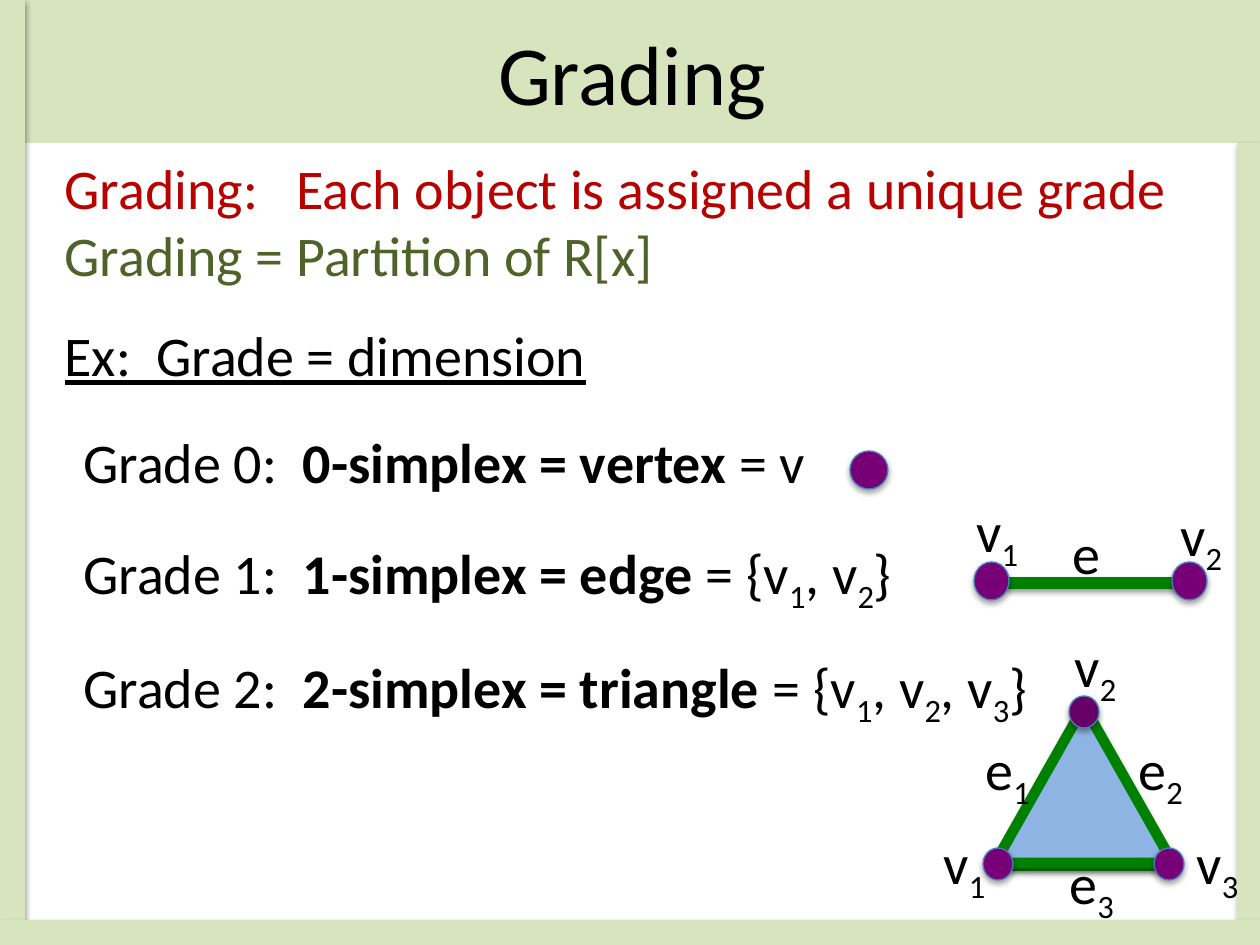
from lxml import etree
from pptx import Presentation, util as u
from pptx.dml.color import RGBColor
from pptx.enum import shapes, text
from pptx.oxml import ns

HUE = {"band": "D7E4BD", "red": "B60200", "olive": "4F6228", "ink": "000000",
       "dot": "770077", "peak": "660066", "rim": "4B7EBC",
       "edge": "008000", "face": "8EB4E3"}
HUE = {name: RGBColor.from_string(code) for name, code in HUE.items()}
PX = 914400 / 126


def shade(shape, alpha=35, dist=23000):
    glow = etree.SubElement(shape._element.spPr, ns.qn("a:effectLst"))
    drop = etree.SubElement(glow, ns.qn("a:outerShdw"), blurRad="40000",
                            dist=str(dist), dir="5400000", rotWithShape="0")
    tint = etree.SubElement(drop, ns.qn("a:srgbClr"), val="000000")
    etree.SubElement(tint, ns.qn("a:alpha"), val=str(alpha * 1000))


def write(para, parts):
    para.font.size, para.font.name = u.Pt(32), "Calibri"
    para.font.color.rgb = HUE["ink"]
    for words, bold in parts:
        for i, piece in enumerate(words.split("_")):
            if i:
                low = para.add_run()
                low.text = piece[0]
                low._r.get_or_add_rPr().set("baseline", "-25000")
                piece = piece[1:]
            if piece:
                run = para.add_run()
                run.text = piece
                if bold:
                    run.font.bold = True


deck = Presentation()
deck.slide_width, deck.slide_height = u.Inches(10), u.Inches(7.5)
slide = deck.slides.add_slide(deck.slide_layouts[1])
art = slide.shapes
kind = shapes.MSO_SHAPE

title = art.title
title.left, title.top, title.width, title.height = [
    int(n * PX) for n in (2, 0, 1260, 143)]
title.fill.solid()
title.fill.fore_color.rgb = HUE["band"]
title.text_frame.text = "Grading"
title.text_frame.vertical_anchor = text.MSO_ANCHOR.MIDDLE
head = title.text_frame.paragraphs[0]
head.alignment = text.PP_ALIGN.CENTER
head.font.size, head.font.name = u.Pt(48), "Calibri"
head.font.color.rgb = HUE["ink"]

for box in [(0, 0, 25, 945), (1237, 143, 25, 802), (0, 920, 1260, 25)]:
    strip = art.add_shape(kind.RECTANGLE, *[int(n * PX) for n in box])
    strip.fill.solid()
    strip.fill.fore_color.rgb = HUE["band"]
    strip.line.fill.background()
    shade(strip)

body = slide.placeholders[1]
body.left, body.top, body.width, body.height = [
    int(n * PX) for n in (52, 147, 1160, 251)]
frame = body.text_frame
frame.auto_size = text.MSO_AUTO_SIZE.NONE
lines = [("Grading:   Each object is assigned a unique grade", "red", 0),
         ("Grading = Partition of R[x]", "olive", 0),
         ("Ex:  Grade = dimension", "ink", 19)]
for i, (words, hue, gap) in enumerate(lines):
    para = frame.add_paragraph() if i else frame.paragraphs[0]
    write(para, [(words, False)])
    para.font.color.rgb = HUE[hue]
    para.font.underline = hue == "ink"
    para.space_before = u.Pt(gap)
    props = para._p.get_or_add_pPr()
    props.set("marL", "0")
    props.set("indent", "0")
    props.find(ns.qn("a:defRPr")).addprevious(
        etree.Element(ns.qn("a:buNone")))

grades = [(421, "0-simplex = vertex ", "= v"),
          (532, "1-simplex = edge ", "= {v_1, v_2}"),
          (646, "2-simplex = triangle ", "= {v_1, v_2, v_3}")]
for i, (y, name, rest) in enumerate(grades):
    row = art.add_textbox(*[int(n * PX) for n in (71, y, 1140, 81)])
    row.text_frame.word_wrap = True
    write(row.text_frame.paragraphs[0],
          [(f"Grade {i}:  ", False), (name, True), (rest, False)])

for x, end, y, size in [(1005, 1182, 583, 7), (1009, 1164, 867, 5)]:
    edge = art.add_connector(shapes.MSO_CONNECTOR.STRAIGHT,
                             *[int(n * PX) for n in (x, y, end, y)])
    edge.line.color.rgb = HUE["edge"]
    edge.line.width = u.Pt(size)
    shade(edge, 38, 20000)

solids = [(kind.ISOSCELES_TRIANGLE, 995, 706, 178, 157, "face", "edge", 6)]
dots = [(850, 451, 38, 38, "dot"), (974, 562, 35, 38, "dot"),
        (1172, 562, 35, 38, "dot"), (983, 848, 30, 32, "dot"),
        (1154, 848, 30, 32, "dot"), (1069, 696, 30, 32, "peak")]
solids += [(kind.OVAL, *dot, "rim", 0.75) for dot in dots]
for form, x, y, w, h, hue, rim, size in solids:
    solid = art.add_shape(form, *[int(n * PX) for n in (x, y, w, h)])
    solid.fill.solid()
    solid.fill.fore_color.rgb = HUE[hue]
    solid.line.color.rgb = HUE[rim]
    solid.line.width = u.Pt(size)
    shade(solid)

tags = [("v_1", 964, 490), ("e", 1060, 512), ("v_2", 1168, 494),
        ("v_2", 1062, 625), ("e_1", 973, 728), ("e_2", 1126, 728),
        ("v_1", 931, 822), ("e_3", 1057, 842), ("v_3", 1184, 822)]
for words, x, y in tags:
    tag = art.add_textbox(*[int(n * PX) for n in (x, y, 72, 67)])
    write(tag.text_frame.paragraphs[0], [(words, False)])

deck.save("out.pptx")
